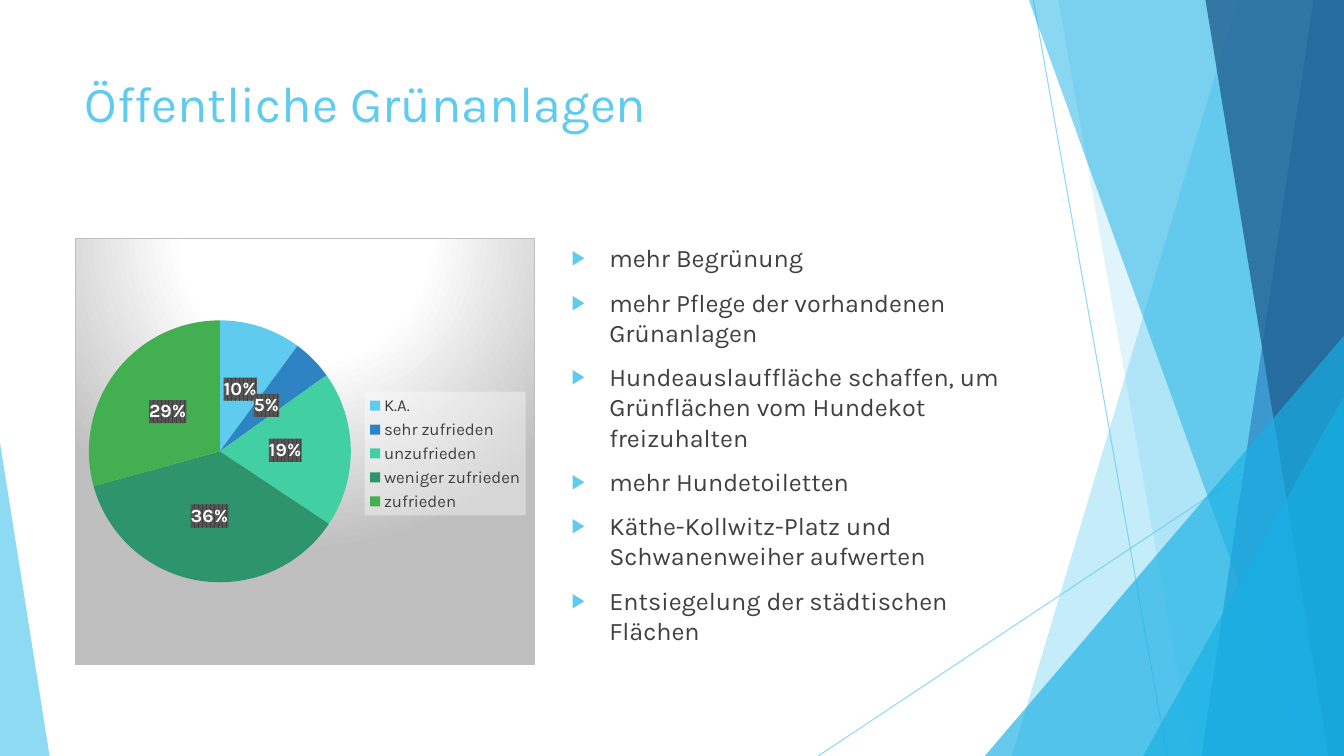
from pptx import Presentation
from pptx.chart.data import CategoryChartData
from pptx.dml.color import RGBColor
from pptx.enum.chart import XL_CHART_TYPE, XL_LABEL_POSITION, XL_LEGEND_POSITION
from pptx.enum.shapes import MSO_CONNECTOR, MSO_SHAPE
from pptx.enum.text import MSO_ANCHOR, MSO_AUTO_SIZE, PP_ALIGN
from pptx.oxml import parse_xml
from pptx.oxml.ns import nsdecls
from pptx.util import Cm, Pt

WIDE, HIGH = 33.87, 19.05
FONT = "Karla"
HUES = {
    "sky": "5FCBEF", "cyan": "17B0E4", "blue": "2E83C3", "navy": "226292",
    "mint": "42D0A2", "pine": "2E946B", "leaf": "42B051",
    "text": "404040", "mid": "595959", "gray": "BFBFBF",
    "white": "FFFFFF", "black": "000000",
}
BANDS = [
    (31.19, 25.5, "sky", 36),
    (26.67, 30.05, "sky", 20),
    (25.93, 32.79, "cyan", 50),
    (33.1, 30.28, "blue", 70),
    (30.38, 33.48, "navy", 80),
]
PEAKS = [
    (24.82, 8.46, 9.05, 1, "cyan", 66),
    (28.81, 9.98, 5.06, 1, "cyan", 66),
    (0, 11.15, 1.25, 0, "sky", 70),
]
RAYS = [(26.04, 0, 29.41, HIGH), (WIDE, 10.24, 20.62, HIGH)]
ITEMS = [
    "mehr Begrünung",
    "mehr Pflege der vorhandenen Grünanlagen",
    "Hundeauslauffläche schaffen, um Grünflächen vom Hundekot freizuhalten",
    "mehr Hundetoiletten",
    "Käthe-Kollwitz-Platz und Schwanenweiher aufwerten",
    "Entsiegelung der städtischen Flächen",
]
PARTS = [
    ("K.A.", 10, "sky"),
    ("sehr zufrieden", 5, "blue"),
    ("unzufrieden", 19, "mint"),
    ("weniger zufrieden", 36, "pine"),
    ("zufrieden", 29, "leaf"),
]


def rgb(hue):
    return RGBColor.from_string(HUES[hue])


def style(font, size, hue, bold=False):
    font.name, font.size, font.bold = FONT, Pt(size), bold
    font.color.rgb = rgb(hue)


def put(para, text, size=18, hue="text", gap=0):
    run = para.add_run()
    run.text = text
    style(run.font, size, hue)
    para.alignment = PP_ALIGN.LEFT
    para.space_before = Pt(gap)


def make(tag, body=""):
    return parse_xml(f"<{tag} {nsdecls('a', 'c')}>{body}</{tag}>")


def tint(hue, alpha=100):
    return f'<a:srgbClr val="{HUES[hue]}"><a:alpha val="{alpha * 1000}"/></a:srgbClr>'


def fade(shape, alpha):
    for node in shape.element.xpath("./p:spPr//a:srgbClr"):
        node.append(parse_xml(f'<a:alpha {nsdecls("a")} val="{alpha * 1000}"/>'))


def place(node, spot, box, inner=False):
    for old in node.xpath("./c:layout"):
        node.remove(old)
    body = '<c:layoutTarget val="inner"/>' if inner else ""
    body += '<c:xMode val="edge"/><c:yMode val="edge"/>'
    body += "".join(f'<c:{key} val="{val}"/>' for key, val in zip("xywh", box))
    node.insert(spot, make("c:layout", f"<c:manualLayout>{body}</c:manualLayout>"))


class Deck:
    def __init__(self):
        self.show = Presentation()
        self.show.slide_width, self.show.slide_height = Cm(WIDE), Cm(HIGH)
        self.slide = self.show.slides.add_slide(self.show.slide_layouts[1])
        self.shapes = self.slide.shapes

    def paint(self, shape, hue, alpha):
        shape.shadow.inherit = False
        shape.fill.solid()
        shape.fill.fore_color.rgb = rgb(hue)
        shape.line.fill.background()
        fade(shape, alpha)

    def ray(self, *ends):
        line = self.shapes.add_connector(MSO_CONNECTOR.STRAIGHT, *map(Cm, ends))
        line.line.color.rgb = rgb("sky")
        line.line.width = Pt(0.75)
        line.element.spPr.append(make("a:effectLst"))
        fade(line, 70)

    def band(self, top, foot, hue, alpha):
        path = self.shapes.build_freeform(Cm(top), 0)
        ends = [(WIDE, 0), (WIDE, HIGH), (foot, HIGH)]
        path.add_line_segments([(Cm(x), Cm(y)) for x, y in ends])
        self.paint(path.convert_to_shape(), hue, alpha)

    def peak(self, left, top, width, tip, hue, alpha):
        box = map(Cm, (left, top, width, HIGH - top))
        shape = self.shapes.add_shape(MSO_SHAPE.ISOSCELES_TRIANGLE, *box)
        shape.adjustments[0] = tip
        self.paint(shape, hue, alpha)

    def frame(self, index, *box):
        shape = self.slide.placeholders[index]
        shape.left, shape.top, shape.width, shape.height = map(Cm, box)
        text = shape.text_frame
        text.word_wrap = True
        text.auto_size = MSO_AUTO_SIZE.NONE
        text.vertical_anchor = MSO_ANCHOR.TOP
        return text

    def title(self, text, *box):
        put(self.frame(0, *box).paragraphs[0], text, size=36, hue="sky")

    def bullets(self, items, *box):
        text = self.frame(1, *box)
        for num, item in enumerate(items):
            para = text.add_paragraph() if num else text.paragraphs[0]
            put(para, item, gap=10)
            props = para._p.get_or_add_pPr()
            props.set("marL", str(Cm(0.95)))
            props.set("indent", str(-Cm(0.95)))
            marks = make("a:pPr", f'<a:buClr>{tint("sky")}</a:buClr><a:buSzPct val="80000"/>'
                                  '<a:buFont typeface="Arial"/><a:buChar char="▶"/>')
            props.extend(list(marks))

    def pie(self, parts, *box):
        names, vals, hues = zip(*parts)
        data = CategoryChartData()
        data.categories = names
        data.add_series("Series 1", vals)
        chart = self.shapes.add_chart(XL_CHART_TYPE.PIE, *map(Cm, box), data).chart
        chart.has_title = False
        style(chart.font, 10, "black")
        plot = chart.plots[0]
        plot.vary_by_categories = True
        for num, hue in enumerate(hues):
            fill = plot.series[0].points[num].format.fill
            fill.solid()
            fill.fore_color.rgb = rgb(hue)
        self.labels(plot.series[0].data_labels)
        self.legend(chart)
        root = chart.element
        place(root.xpath(".//c:plotArea")[0], 0, (0.03, 0.19, 0.57, 0.62), True)
        stops = [(0, "white"), (39, "white"), (100, "gray")]
        grad = "".join(f'<a:gs pos="{pos * 1000}">{tint(hue)}</a:gs>' for pos, hue in stops)
        look = make("c:spPr", f'<a:gradFill><a:gsLst>{grad}</a:gsLst><a:path path="circle">'
                              '<a:fillToRect l="50000" t="-80000" r="50000" b="180000"/>'
                              f'</a:path></a:gradFill><a:ln w="{Pt(0.75)}"><a:solidFill>'
                              f'{tint("gray")}</a:solidFill></a:ln>')
        root.xpath("./c:chart")[0].addnext(look)

    def labels(self, tags):
        tags.show_percentage = True
        tags.show_value = False
        tags.number_format = "0%"
        tags.number_format_is_linked = False
        tags.position = XL_LABEL_POSITION.CENTER
        style(tags.font, 13.3, "white", bold=True)
        fill = make("c:spPr", f'<a:pattFill prst="pct75"><a:fgClr>{tint("text")}</a:fgClr>'
                              f'<a:bgClr>{tint("mid")}</a:bgClr></a:pattFill>')
        tags._element.xpath("./c:numFmt")[0].addnext(fill)

    def legend(self, chart):
        chart.has_legend = True
        chart.legend.position = XL_LEGEND_POSITION.RIGHT
        chart.legend.include_in_layout = False
        style(chart.legend.font, 12, "text")
        node = chart.element.xpath(".//c:legend")[0]
        place(node, 1, (0.63, 0.36, 0.35, 0.29))
        fill = make("c:spPr", f'<a:solidFill>{tint("white", 39)}</a:solidFill>')
        node.xpath("./c:overlay")[0].addnext(fill)


def main():
    deck = Deck()
    for ray in RAYS:
        deck.ray(*ray)
    for band in BANDS:
        deck.band(*band)
    for peak in PEAKS:
        deck.peak(*peak)
    deck.title("Öffentliche Grünanlagen", 1.88, 1.7, 23.88, 3.66)
    deck.bullets(ITEMS, 14.15, 5.99, 11.63, 10.77)
    deck.pie(PARTS, 1.88, 5.99, 11.61, 10.77)
    deck.show.save("out.pptx")


if __name__ == "__main__":
    main()
